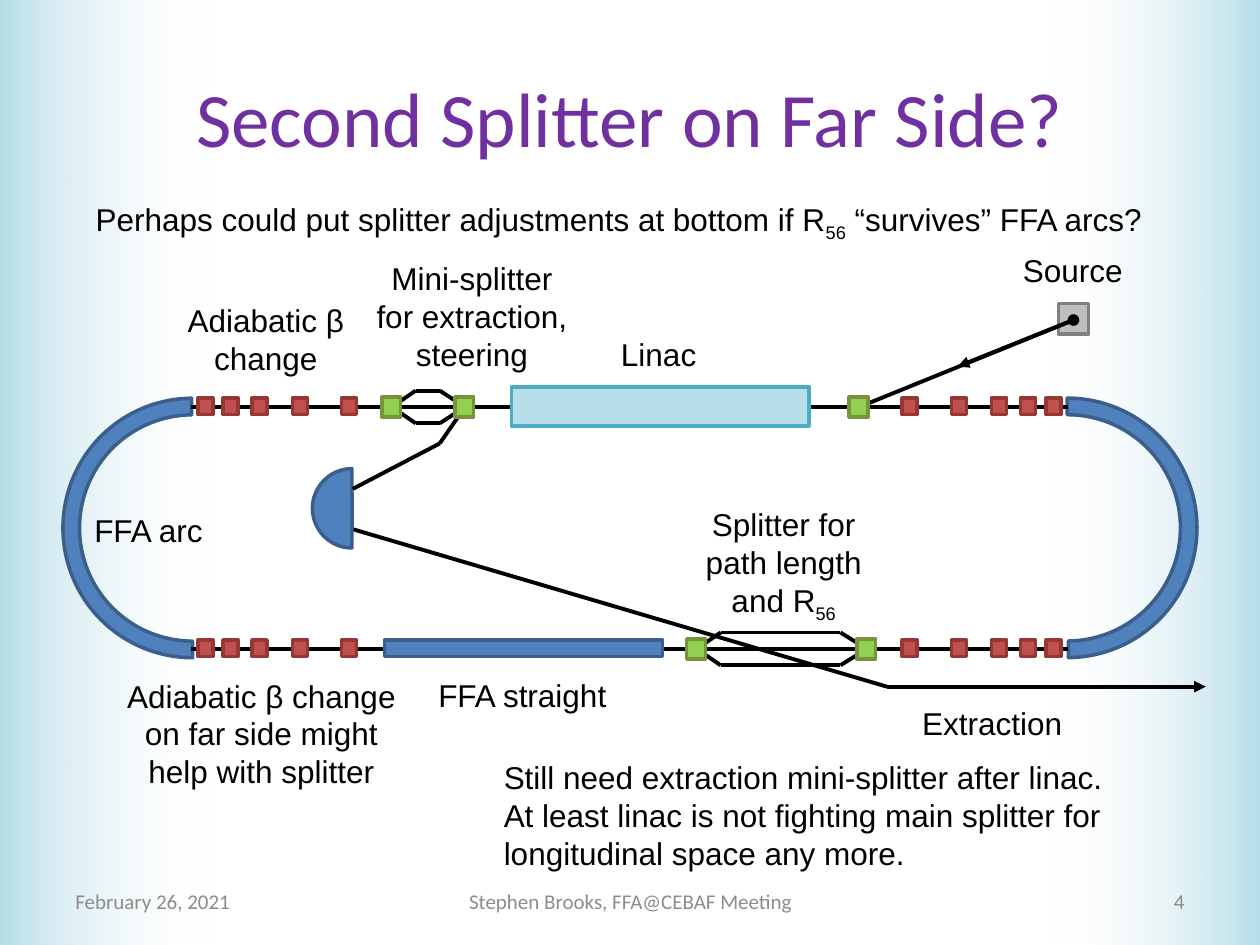
from lxml import etree
from pptx import Presentation
from pptx import util as u
from pptx.dml import color
from pptx.enum import shapes, text
from pptx.oxml import ns

SHAPE = shapes.MSO_SHAPE
ALIGN = text.PP_ALIGN
BLUE = ("4F81BD", "3A5F8C")
RED = ("C0504D", "953735")
GREEN = ("92D050", "77933C")
GRAY = ("BFBFBF", "808080")
CYAN = ("B7DEE8", "4BACC6")
TOP_BEAM = 3.23
BOTTOM_BEAM = 5.15


def rgb(value):
    return color.RGBColor.from_string(value)


def child(parent, tag, **attributes):
    return etree.SubElement(parent, ns.qn(tag), **attributes)


class Diagram:
    font = "Arial"
    size = 18
    ink = "000000"
    beam_width = 2.25
    outline_width = 2

    def __init__(self, presentation):
        layout = presentation.slide_layouts[6]
        self.slide = presentation.slides.add_slide(layout)

    def block(self, left, top, width, height, colors,
              kind=SHAPE.RECTANGLE, rotation=0, adjustments=()):
        shape = self.slide.shapes.add_shape(
            kind, *map(u.Inches, (left, top, width, height)))
        shape.shadow.inherit = False
        shape.rotation = rotation
        fill, outline = colors
        shape.fill.solid()
        shape.fill.fore_color.rgb = rgb(fill)
        shape.line.color.rgb = rgb(outline)
        shape.line.width = u.Pt(self.outline_width)
        for index, value in enumerate(adjustments):
            shape.adjustments[index] = value
        return shape

    def side_fade(self, left, rotation):
        shape = self.block(left, 0, 1.69, 7.5, CYAN, rotation=rotation)
        shape.line.fill.background()
        shape.fill.gradient()
        shape.fill.gradient_angle = 0
        for stop, value, position in zip(
                shape.fill.gradient_stops, ("B7DEE8", "FFFFFF"), (0, 1)):
            stop.color.rgb = rgb(value)
            stop.position = position
        clear = shape._element.spPr.findall(".//" + ns.qn("a:srgbClr"))[-1]
        child(clear, "a:alpha", val="0")

    def line(self, start, end, tail=None):
        connector = self.slide.shapes.add_connector(
            shapes.MSO_CONNECTOR.STRAIGHT, *map(u.Inches, start + end))
        connector.line.color.rgb = rgb(self.ink)
        connector.line.width = u.Pt(self.beam_width)
        if tail:
            child(connector.line._get_or_add_ln(), "a:tailEnd", type=tail)
        child(connector._element.spPr, "a:effectLst")

    def label(self, content, left, top, width, height=0.4, align=ALIGN.LEFT,
              wrap=False, grow=True, font=None, size=None, ink=None):
        box = self.slide.shapes.add_textbox(
            *map(u.Inches, (left, top, width, height)))
        frame = box.text_frame
        frame.word_wrap = wrap
        if grow:
            frame.auto_size = text.MSO_AUTO_SIZE.SHAPE_TO_FIT_TEXT
        else:
            frame.vertical_anchor = text.MSO_ANCHOR.MIDDLE
        for index, words in enumerate(content.split("\n")):
            paragraph = frame.add_paragraph() if index else frame.paragraphs[0]
            paragraph.alignment = align
            paragraph.font.name = font or self.font
            paragraph.font.size = u.Pt(size or self.size)
            paragraph.font.color.rgb = rgb(ink or self.ink)
            for part, piece in enumerate(words.split("~")):
                if piece:
                    run = paragraph.add_run()
                    run.text = piece
                    if part % 2:
                        run._r.get_or_add_rPr().set("baseline", "-25000")

    def note(self, content, left, top, width, height):
        self.label(content, left, top, width, height, ALIGN.CENTER, wrap=True)

    def frame_text(self, content, left, top, width, height, align,
                   size=12, ink="8C8C8C"):
        self.label(content, left, top, width, height, align, wrap=True,
                   grow=False, font="Calibri", size=size, ink=ink)

    def bypass(self, start, first, last, end, beam, rise=0.13):
        for level in (beam - rise, beam + rise):
            self.line((start, beam), (first, level))
            self.line((first, level), (last, level))
            self.line((last, level), (end, beam))

    def splitter_magnet(self, center, beam):
        self.block(center - 0.08, beam - 0.08, 0.15, 0.16, GREEN)

    def magnets(self, outermost, beam, direction):
        for offset in (0, 0.2, 0.43, 0.75, 1.14):
            self.block(outermost + direction * offset, beam - 0.07,
                       0.12, 0.13, RED)

    def arc(self, left, rotation):
        self.block(left, 3.16, 2.06, 2.06, BLUE, SHAPE.BLOCK_ARC, rotation,
                   (108, 215.69, 0.064))


def main():
    presentation = Presentation()
    presentation.slide_width = u.Inches(10)
    presentation.slide_height = u.Inches(7.5)
    diagram = Diagram(presentation)

    diagram.side_fade(8.31, 180)
    diagram.side_fade(0, 0)
    diagram.frame_text("Second Splitter on Far Side?", 0.5, 0.3, 9, 1.25,
                       ALIGN.CENTER, 44, "7030A0")
    diagram.frame_text("February 26, 2021", 0.5, 6.95, 2.33, 0.4, ALIGN.LEFT)
    diagram.frame_text("Stephen Brooks, FFA@CEBAF Meeting",
                       3.42, 6.95, 3.17, 0.4, ALIGN.CENTER)
    diagram.frame_text("4", 7.17, 6.95, 2.33, 0.4, ALIGN.RIGHT, ink="898989")

    diagram.arc(0.5, 270)
    diagram.arc(7.44, 90)
    for beam in (TOP_BEAM, BOTTOM_BEAM):
        diagram.line((1.52, beam), (8.48, beam))
        diagram.magnets(8.3, beam, -1)
        diagram.magnets(1.57, beam, 1)
    diagram.block(4.06, 3.07, 2.36, 0.31, CYAN)
    diagram.block(3.05, 5.08, 2.21, 0.13, BLUE)

    source = (8.52, 2.54)
    diagram.block(8.4, 2.41, 0.24, 0.24, GRAY)
    diagram.line((6.82, TOP_BEAM), source, "oval")
    diagram.line(source, (7.6, 2.91), "triangle")

    kicker = (3.49, 3.52)
    diagram.line(kicker, (3.69, TOP_BEAM))
    diagram.bypass(3.11, 3.3, 3.49, 3.69, TOP_BEAM)
    diagram.bypass(5.53, 5.72, 6.67, 6.88, BOTTOM_BEAM)
    for center, beam in ((3.11, TOP_BEAM), (3.69, TOP_BEAM),
                         (6.82, TOP_BEAM), (5.53, BOTTOM_BEAM),
                         (6.88, BOTTOM_BEAM)):
        diagram.splitter_magnet(center, beam)

    bend = (7.04, 5.45)
    diagram.line((2.8, 4.2), bend)
    diagram.line(bend, (9.57, 5.45), "triangle")
    diagram.block(2.48, 3.72, 0.63, 0.63, BLUE, SHAPE.PIE,
                  adjustments=(54.19, 161.75))
    diagram.line((2.8, 3.88), kicker)

    diagram.label("Perhaps could put splitter adjustments at bottom if "
                  "R~56~ “survives” FFA arcs?", 0.66, 1.54, 8.61)
    diagram.label("Source", 8.02, 1.94, 1)
    diagram.label("Linac", 4.83, 2.61, 0.81)
    diagram.label("FFA arc", 0.65, 4.01, 1.07)
    diagram.label("FFA straight", 3.38, 5.32, 1.55)
    diagram.label("Extraction", 7.22, 5.54, 1.32)
    diagram.note("Splitter for path length and R~56", 5.4, 3.96, 1.64, 1.01)
    diagram.note("Adiabatic β change", 1.3, 2.34, 1.62, 0.71)
    diagram.note("Adiabatic β change on far side might help with splitter",
                 0.91, 5.32, 2.33, 1.01)
    diagram.note("Mini-splitter for extraction, steering",
                 2.87, 2.01, 1.75, 1.01)
    diagram.label("Still need extraction mini-splitter after linac.\n"
                  "At least linac is not fighting main splitter for "
                  "longitudinal space any more.",
                  3.9, 5.97, 5.63, 1.01, wrap=True)

    presentation.save("out.pptx")


if __name__ == "__main__":
    main()
